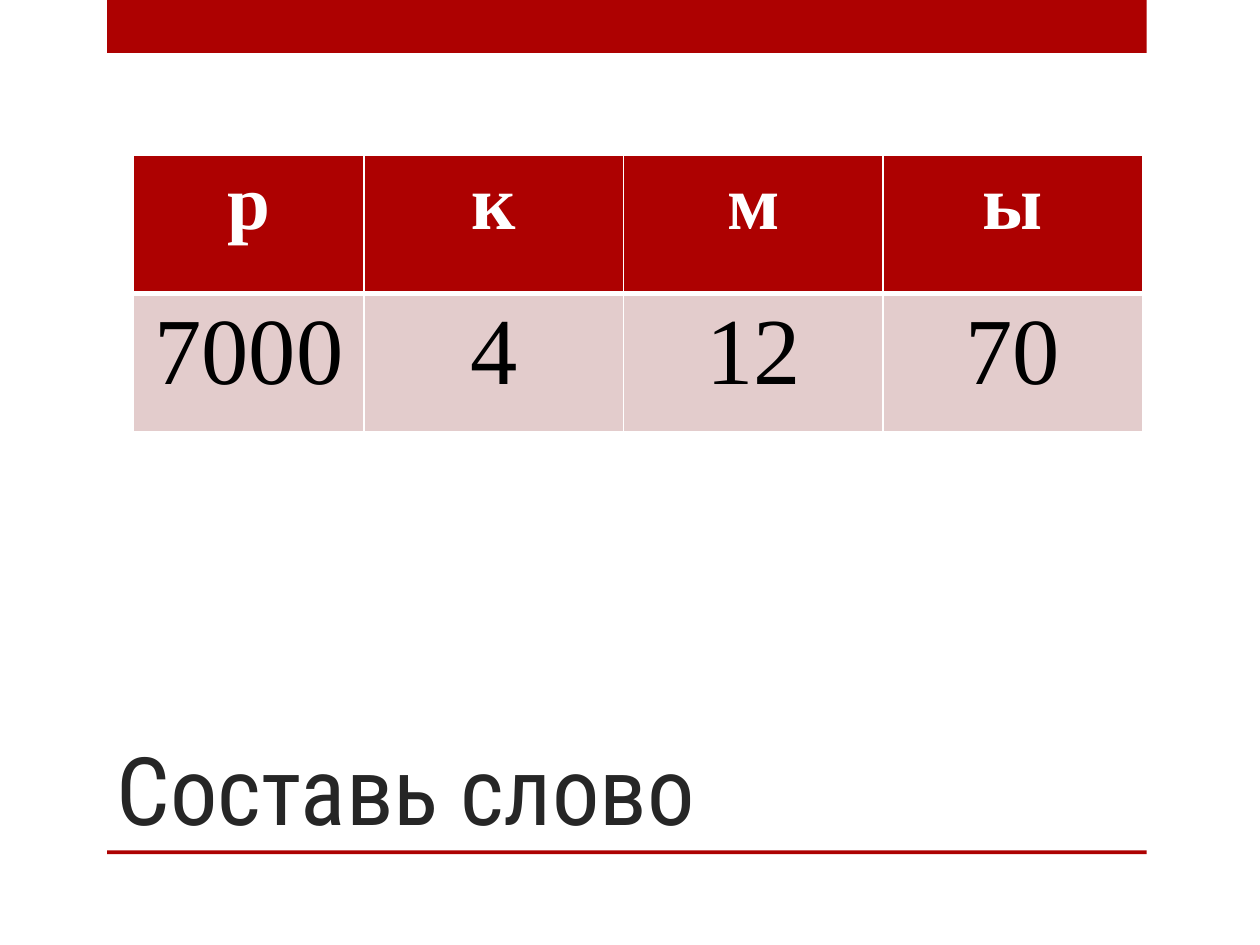
from dataclasses import dataclass

import pptx
import pptx.dml.color
import pptx.enum.shapes
import pptx.enum.text
import pptx.oxml
import pptx.oxml.ns
import pptx.slide
import pptx.table
import pptx.text.text
import pptx.util
from pptx.util import Inches

RED = "AD0101"
WHITE = "FFFFFF"


@dataclass
class Bar:
    top: float
    height: float


@dataclass
class RowStyle:
    texts: list[str]
    size: int
    bold: bool
    color: str
    fill: str
    borders: dict[str, int]


BARS = [Bar(0, 0.42), Bar(6.75, 0.03)]
ROWS = [
    RowStyle(["р", "к", "м", "ы"], 44, True, WHITE, RED,
             {"L": 1, "R": 1, "T": 1, "B": 3}),
    RowStyle(["7000", "4", "12", "70"], 54, False, "000000", "E3CCCC",
             {"L": 1, "R": 1, "T": 3, "B": 1}),
]
COLUMN_WIDTHS = [1.83, 2.06, 2.06, 2.06]
ROW_HEIGHT = 1.1


def rgb(value: str) -> pptx.dml.color.RGBColor:
    return pptx.dml.color.RGBColor.from_string(value)


def format_text(para: pptx.text.text._Paragraph, font_name: str, size: int,
                color: str, bold: bool = False) -> None:
    for span in para.runs:
        span.font.name = font_name
        span.font.size = pptx.util.Pt(size)
        span.font.bold = bold
        span.font.color.rgb = rgb(color)


def add_bar(page: pptx.slide.Slide, bar: Bar) -> None:
    shape = page.shapes.add_shape(
        pptx.enum.shapes.MSO_SHAPE.RECTANGLE,
        Inches(0.85), Inches(bar.top), Inches(8.25), Inches(bar.height))
    shape.shadow.inherit = False
    shape.fill.solid()
    shape.fill.fore_color.rgb = rgb(RED)
    shape.line.fill.background()


def add_title(page: pptx.slide.Slide, text: str) -> None:
    box = page.shapes.add_textbox(Inches(0.83), Inches(5), Inches(7.42), Inches(1.75))
    frame = box.text_frame
    frame.word_wrap = True
    frame.vertical_anchor = pptx.enum.text.MSO_ANCHOR.BOTTOM
    frame.text = text
    format_text(frame.paragraphs[0], "Roboto Condensed", 54, "262626")


def set_borders(cell: pptx.table._Cell, borders: dict[str, int]) -> None:
    """Draw white cell borders; call before setting the fill, which must follow them."""
    properties = cell._tc.get_or_add_tcPr()
    for side, width in borders.items():
        properties.append(pptx.oxml.parse_xml(
            f'<a:ln{side} {pptx.oxml.ns.nsdecls("a")} w="{pptx.util.Pt(width)}">'
            f'<a:solidFill><a:srgbClr val="{WHITE}"/></a:solidFill></a:ln{side}>'))


def style_cell(cell: pptx.table._Cell, text: str, style: RowStyle) -> None:
    set_borders(cell, style.borders)
    cell.fill.solid()
    cell.fill.fore_color.rgb = rgb(style.fill)
    cell.text_frame.text = text
    para = cell.text_frame.paragraphs[0]
    para.alignment = pptx.enum.text.PP_ALIGN.CENTER
    format_text(para, "Times New Roman", style.size, style.color, style.bold)


def add_letter_table(page: pptx.slide.Slide) -> None:
    table = page.shapes.add_table(
        len(ROWS), len(COLUMN_WIDTHS), Inches(1.06), Inches(1.23),
        Inches(sum(COLUMN_WIDTHS)), Inches(ROW_HEIGHT * len(ROWS))).table
    for column, width in zip(table.columns, COLUMN_WIDTHS):
        column.width = Inches(width)
    for row, style in zip(table.rows, ROWS):
        row.height = Inches(ROW_HEIGHT)
        for cell, text in zip(row.cells, style.texts):
            style_cell(cell, text, style)


def main() -> None:
    deck = pptx.Presentation()
    deck.slide_width, deck.slide_height = Inches(10), Inches(7.5)
    page = deck.slides.add_slide(deck.slide_layouts[6])
    for bar in BARS:
        add_bar(page, bar)
    add_title(page, "Составь слово")
    add_letter_table(page)
    deck.save("out.pptx")


if __name__ == "__main__":
    main()
